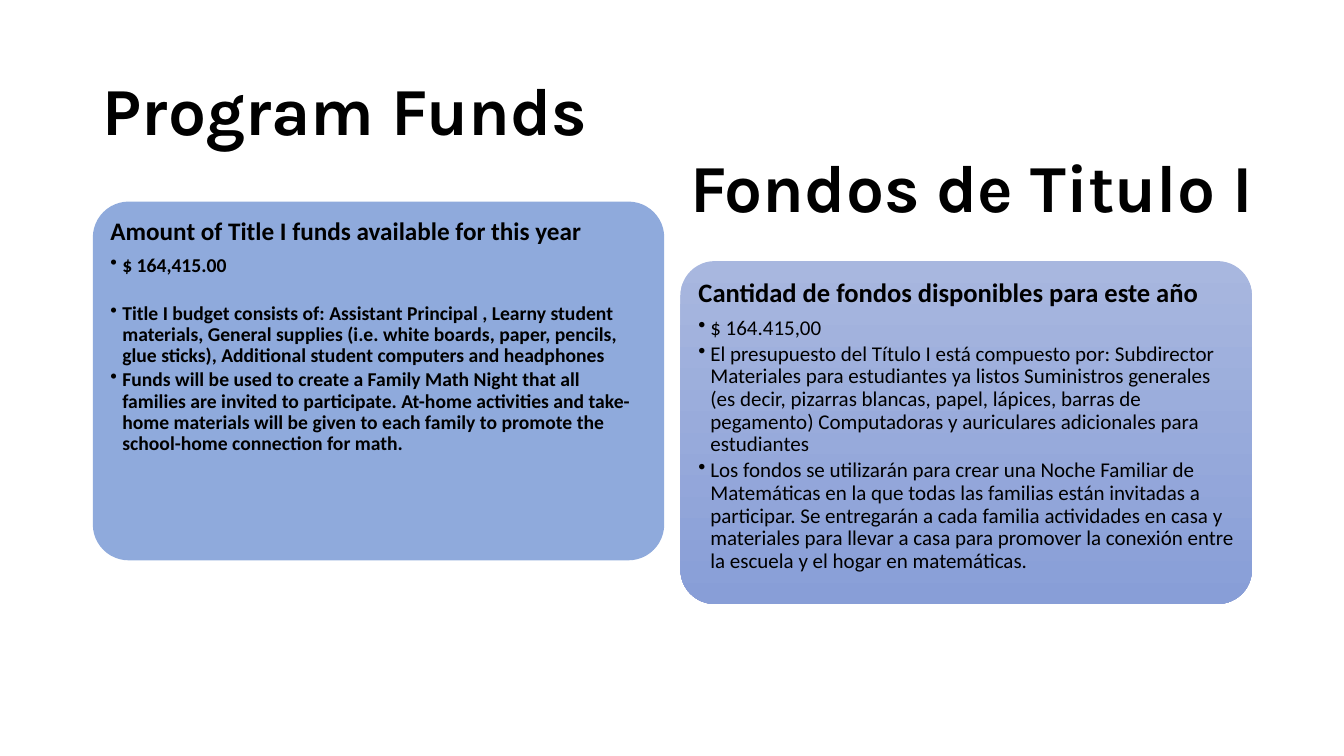
from lxml import etree
from pptx import Presentation
from pptx.dml.color import RGBColor
from pptx.enum.shapes import MSO_SHAPE
from pptx.enum.text import MSO_ANCHOR, PP_ALIGN
from pptx.oxml.ns import qn
from pptx.util import Cm, Pt

ROUNDED = MSO_SHAPE.ROUNDED_RECTANGLE
TOP, MIDDLE = MSO_ANCHOR.TOP, MSO_ANCHOR.MIDDLE
LEFT = PP_ALIGN.LEFT
BLACK = RGBColor(0x00, 0x00, 0x00)
BLUE = RGBColor(0x8F, 0xAA, 0xDC)
PERIWINKLE_LIGHT = RGBColor(0xA8, 0xB7, 0xDF)
PERIWINKLE_DARK = RGBColor(0x88, 0x9E, 0xD7)
LINE_SPACING = 0.9
BULLET_INDENT = Cm(0.3)

ENGLISH_HEADING = "Amount of Title I funds available for this year"
ENGLISH_POINTS = [
    "$ 164,415.00",
    "Title I budget consists of: Assistant Principal , Learny student materials, "
    "General supplies (i.e. white boards, paper, pencils, glue sticks), "
    "Additional student computers and headphones",
    "Funds will be used to create a Family Math Night that all families are "
    "invited to participate. At-home activities and take-home materials will be "
    "given to each family to promote the school-home connection for math.",
]
SPANISH_HEADING = "Cantidad de fondos disponibles para este año"
SPANISH_POINTS = [
    "$ 164.415,00",
    "El presupuesto del Título I está compuesto por: Subdirector Materiales para "
    "estudiantes ya listos Suministros generales (es decir, pizarras blancas, "
    "papel, lápices, barras de pegamento) Computadoras y auriculares adicionales "
    "para estudiantes",
    "Los fondos se utilizarán para crear una Noche Familiar de Matemáticas en la "
    "que todas las familias están invitadas a participar. Se entregarán a cada "
    "familia actividades en casa y materiales para llevar a casa para promover la "
    "conexión entre la escuela y el hogar en matemáticas.",
]


def write_paragraph(paragraph, text, font_name, size, bold):
    """Fill a paragraph with left-aligned black text."""
    paragraph.text = text
    paragraph.alignment = LEFT
    font = paragraph.runs[0].font
    font.name, font.size, font.bold = font_name, Pt(size), bold
    font.color.rgb = BLACK


def add_bullet(paragraph):
    """Give a paragraph a round bullet with a hanging indent."""
    properties = paragraph._p.get_or_add_pPr()
    properties.set("marL", str(BULLET_INDENT))
    properties.set("indent", str(-BULLET_INDENT))
    etree.SubElement(properties, qn("a:buChar")).set("char", "•")


def add_title(slide, text, left, top, width, height, anchor, line_spacing):
    """Add a large bold title."""
    title = slide.shapes.add_textbox(Cm(left), Cm(top), Cm(width), Cm(height))
    frame = title.text_frame
    frame.word_wrap = True
    frame.vertical_anchor = anchor
    write_paragraph(frame.paragraphs[0], text, "Karla", 48, True)
    frame.paragraphs[0].line_spacing = line_spacing


def add_card(slide, left, top, height, inset):
    """Add an empty rounded card without an outline."""
    card = slide.shapes.add_shape(ROUNDED, Cm(left), Cm(top), Cm(14.4), Cm(height))
    card.adjustments[0] = 0.1
    card.shadow.inherit = False
    card.line.fill.background()
    frame = card.text_frame
    frame.word_wrap = True
    frame.vertical_anchor = TOP
    frame.margin_left = frame.margin_right = Cm(inset)
    frame.margin_top = frame.margin_bottom = Cm(inset)
    return card


def fill_card(card, heading, points, heading_size, point_size, bold_points):
    """Write a heading and its bulleted points into a card."""
    frame = card.text_frame
    heading_line = frame.paragraphs[0]
    write_paragraph(heading_line, heading, "Calibri", heading_size, True)
    heading_line.line_spacing = LINE_SPACING
    heading_line.space_after = Pt(heading_size * 0.35)
    for point in points:
        point_line = frame.add_paragraph()
        write_paragraph(point_line, point, "Calibri", point_size, bold_points)
        point_line.line_spacing = LINE_SPACING
        point_line.space_after = Pt(point_size * 0.15)
        add_bullet(point_line)


def main():
    """Build the bilingual program funds slide."""
    deck = Presentation()
    deck.slide_width, deck.slide_height = Cm(33.87), Cm(19.05)
    slide = deck.slides.add_slide(deck.slide_layouts[6])

    add_title(slide, "Program Funds", 2.34, 1.02, 14.6, 3.68, MIDDLE, LINE_SPACING)

    english_card = add_card(slide, 2.34, 5.08, 9.04, 0.18)
    english_card.fill.solid()
    english_card.fill.fore_color.rgb = BLUE
    fill_card(english_card, ENGLISH_HEADING, ENGLISH_POINTS, 18, 14, True)
    english_card.text_frame.paragraphs[1].space_after = Pt(19.3)

    spanish_card = add_card(slide, 17.15, 6.58, 8.64, 0.2)
    spanish_card.fill.gradient()
    spanish_card.fill.gradient_angle = 270
    shades = (PERIWINKLE_LIGHT, PERIWINKLE_DARK)
    for stop, shade in zip(spanish_card.fill.gradient_stops, shades):
        stop.color.rgb = shade
    fill_card(spanish_card, SPANISH_HEADING, SPANISH_POINTS, 19, 15, False)

    add_title(slide, "Fondos de Titulo I", 17.15, 3.53, 16.7, 2.31, TOP, 1.0)

    deck.save("out.pptx")


if __name__ == "__main__":
    main()
